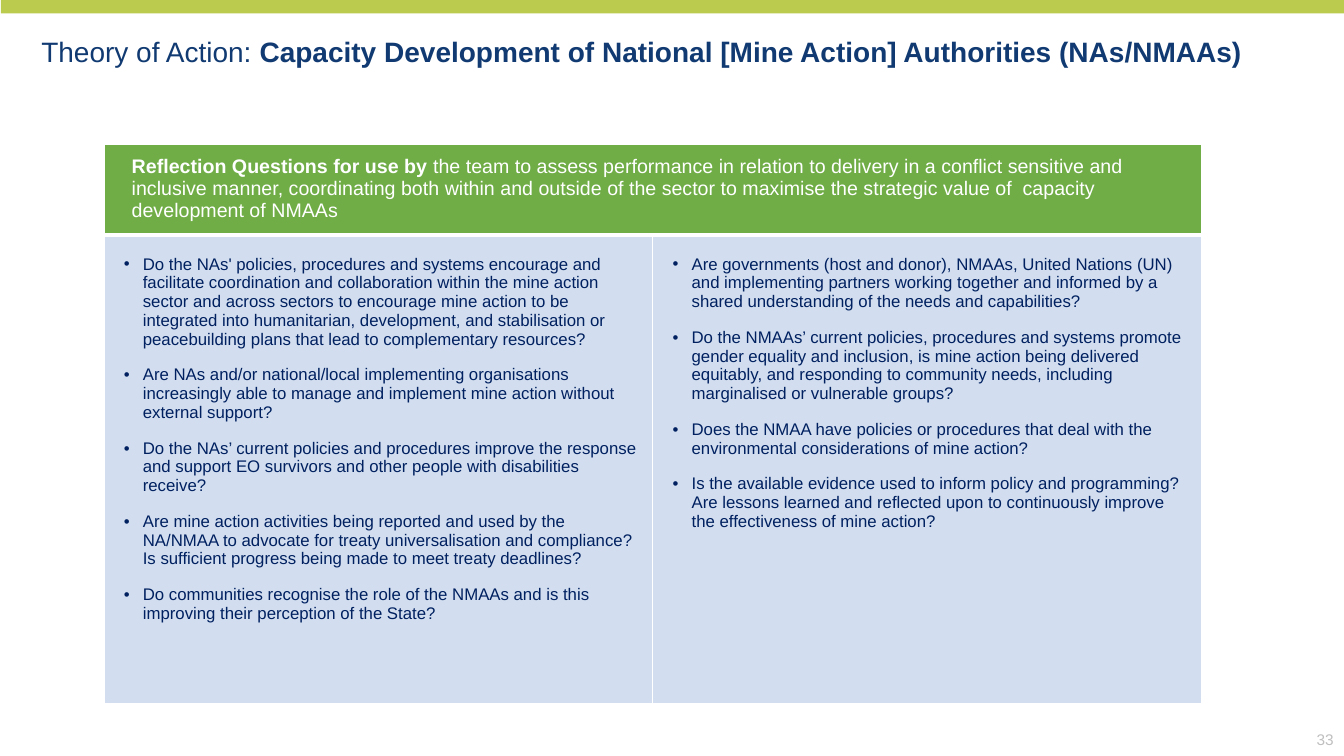
from lxml.etree import SubElement
from pptx import Presentation
from pptx.dml.color import RGBColor
from pptx.enum.shapes import MSO_SHAPE as Shape
from pptx.enum.text import MSO_ANCHOR as Anchor, MSO_AUTO_SIZE as AutoSize, PP_ALIGN as Align
from pptx.oxml.ns import qn
from pptx.util import Cm, Pt

# Content: runs are (text, bold)
TITLE = [
    ("Theory of Action: ", False),
    ("Capacity Development of National [Mine Action] Authorities (NAs/NMAAs)", True),
]
HEADING = [
    ("Reflection Questions for use by ", True),
    ("the team to assess performance in relation to delivery in a conflict sensitive and "
     "inclusive manner, coordinating both within and outside of the sector to maximise the "
     "strategic value of  capacity development of NMAAs", False),
]
QUESTIONS = [
    [
        "Do the NAs' policies, procedures and systems encourage and facilitate coordination and "
        "collaboration within the mine action sector and across sectors to encourage mine action "
        "to be integrated into humanitarian, development, and stabilisation or peacebuilding "
        "plans that lead to complementary resources?",
        "Are NAs and/or national/local implementing organisations increasingly able to manage "
        "and implement mine action without external support?",
        "Do the NAs’ current policies and procedures improve the response and support EO "
        "survivors and other people with disabilities receive?",
        "Are mine action activities being reported and used by the NA/NMAA to advocate for "
        "treaty universalisation and compliance?  Is sufficient progress being made to meet "
        "treaty deadlines?",
        "Do communities recognise the role of the NMAAs and is this improving their perception "
        "of the State?",
    ],
    [
        "Are governments (host and donor), NMAAs, United Nations (UN) and implementing partners "
        "working together and informed by a shared understanding of the needs and capabilities?",
        "Do the NMAAs’ current policies, procedures and systems promote gender equality and "
        "inclusion, is mine action being delivered equitably, and responding to community needs, "
        "including marginalised or vulnerable groups?",
        "Does the NMAA have policies or procedures that deal with the environmental "
        "considerations of mine action?",
        "Is the available evidence used to inform policy and programming? Are lessons learned "
        "and reflected upon to continuously improve the effectiveness of mine action?",
    ],
]
PAGE = "33"

FONT = "Arial"
LIME, GREEN, PALE_BLUE, WHITE = "BACB4E", "70AD47", "D2DEEF", "FFFFFF"
TITLE_BLUE, NAVY, GREY = "103A71", "002060", "BFBFBF"
WIDTH, HEIGHT = Cm(33.87), Cm(19.05)
COLUMN_WIDTH = Cm(13.83)
ROW_HEIGHTS = [Cm(2.29), Cm(11.8)]


def color(value):
    return RGBColor.from_string(value)


def add_run(paragraph, text, size, shade, bold=False):
    run = paragraph.add_run()
    run.text = text
    run.font.name, run.font.size, run.font.bold = FONT, Pt(size), bold
    run.font.color.rgb = color(shade)


def set_margins(area, left, top, right, bottom):
    area.margin_left, area.margin_top = Cm(left), Cm(top)
    area.margin_right, area.margin_bottom = Cm(right), Cm(bottom)


def style_cell(cell, shade, bottom_width=1):
    properties = cell._tc.get_or_add_tcPr()
    for side in ("L", "R", "T", "B"):
        width = bottom_width if side == "B" else 1
        line = SubElement(properties, qn("a:ln" + side), w=str(Pt(width)))
        SubElement(SubElement(line, qn("a:solidFill")), qn("a:srgbClr"), val=WHITE)
    cell.fill.solid()
    cell.fill.fore_color.rgb = color(shade)


def add_bullet(paragraph, indent):
    properties = paragraph._p.get_or_add_pPr()
    properties.set("marL", str(indent))
    properties.set("indent", str(-indent))
    SubElement(properties, qn("a:buFont"), typeface=FONT)
    SubElement(properties, qn("a:buChar"), char="•")


deck = Presentation()
deck.slide_width, deck.slide_height = WIDTH, HEIGHT
slide = deck.slides.add_slide(deck.slide_layouts[5])

# Top band
band = slide.shapes.add_shape(Shape.RECTANGLE, Cm(0.02), Cm(-0.02), WIDTH, Cm(0.36))
band.shadow.inherit = False
band.fill.solid()
band.fill.fore_color.rgb = color(LIME)
band.line.fill.background()

# Title
title = slide.shapes.title
title.left, title.top, title.width, title.height = Cm(1.04), Cm(0.86), Cm(31.65), Cm(2.24)
heading_frame = title.text_frame
heading_frame.word_wrap, heading_frame.auto_size = True, AutoSize.NONE
heading_frame.vertical_anchor = Anchor.TOP
set_margins(heading_frame, 0, 0, 0, 0)
heading_frame.paragraphs[0].alignment = Align.LEFT
for text, bold in TITLE:
    add_run(heading_frame.paragraphs[0], text, 20, TITLE_BLUE, bold)

# Question table
questions = slide.shapes.add_table(2, 2, Cm(2.62), Cm(3.63), 2 * COLUMN_WIDTH,
                                   sum(ROW_HEIGHTS)).table
for row, height in zip(questions.rows, ROW_HEIGHTS):
    row.height = height
for column in questions.columns:
    column.width = COLUMN_WIDTH

# Heading row across both columns
header = questions.cell(0, 0)
header.merge(questions.cell(0, 1))
for cell in questions.rows[0].cells:
    style_cell(cell, GREEN, bottom_width=3)
set_margins(header, 0.7, 0.3, 0.25, 0.3)
for text, bold in HEADING:
    add_run(header.text_frame.paragraphs[0], text, 14, WHITE, bold)

# Bulleted questions
for cell, column_questions in zip(questions.rows[1].cells, QUESTIONS):
    style_cell(cell, PALE_BLUE)
    set_margins(cell, 0.5, 0.5, 0.25, 0.13)
    for i, question in enumerate(column_questions):
        frame = cell.text_frame
        paragraph = frame.add_paragraph() if i else frame.paragraphs[0]
        paragraph.space_after = Pt(12)
        add_bullet(paragraph, Cm(0.48))
        add_run(paragraph, question, 12, NAVY)

# Page number
page = slide.shapes.add_textbox(Cm(32.69), Cm(18.21), Cm(1.17), Cm(0.84)).text_frame
page.word_wrap = True
page.vertical_anchor = Anchor.MIDDLE
page.paragraphs[0].alignment = Align.RIGHT
add_run(page.paragraphs[0], PAGE, 11, GREY)

deck.save("out.pptx")
